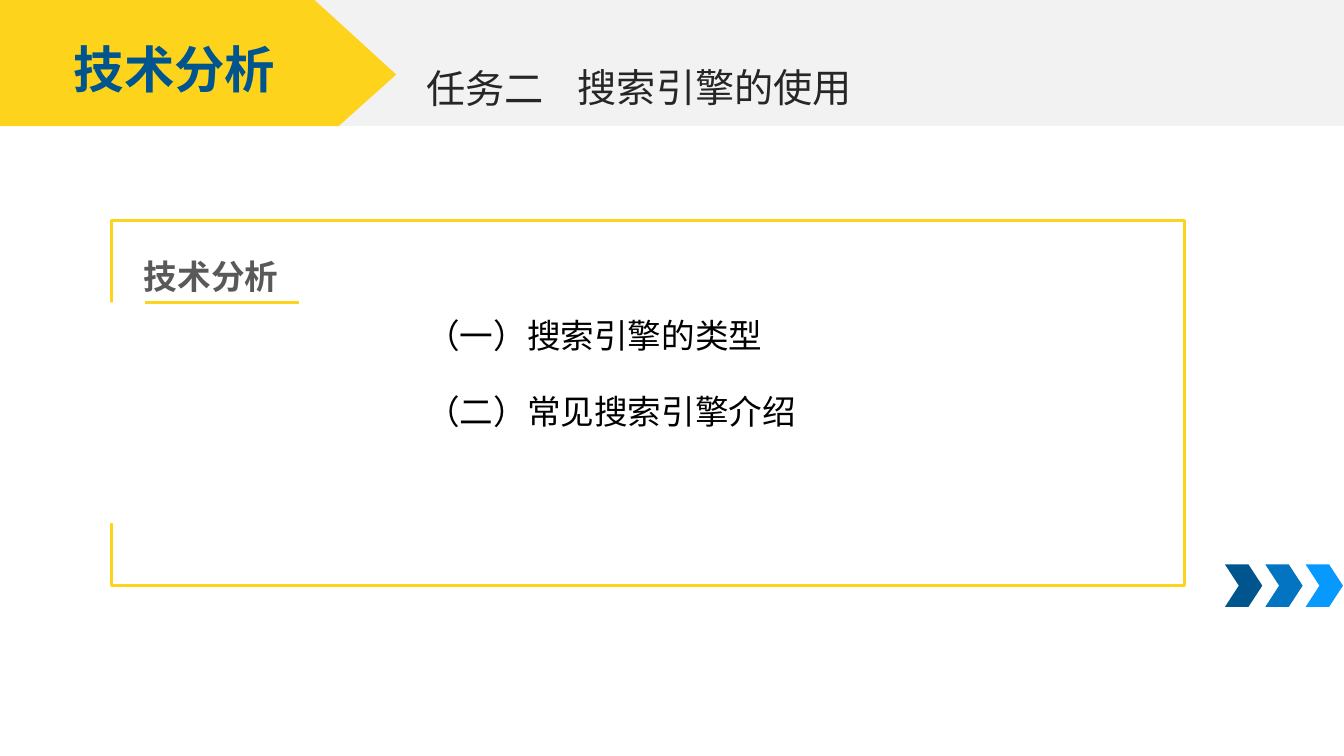
from lxml import etree
from pptx import Presentation
from pptx.dml.color import RGBColor
from pptx.enum.shapes import MSO_CONNECTOR, MSO_SHAPE
from pptx.enum.text import MSO_ANCHOR, MSO_AUTO_SIZE, PP_ALIGN
from pptx.oxml.ns import qn
from pptx.util import Inches, Pt

RECTANGLE, CHEVRON = MSO_SHAPE.RECTANGLE, MSO_SHAPE.CHEVRON
STRAIGHT = MSO_CONNECTOR.STRAIGHT
LEFT, CENTER, JUSTIFY = PP_ALIGN.LEFT, PP_ALIGN.CENTER, PP_ALIGN.JUSTIFY
TOP = MSO_ANCHOR.TOP
GROW = MSO_AUTO_SIZE.SHAPE_TO_FIT_TEXT

COLORS = {
    "white": "FFFFFF",
    "yellow": "FED31C",
    "band": "F2F2F2",
    "navy": "01558E",
    "blue": "0274C2",
    "sky": "0799FD",
    "heading": "595959",
    "title": "262626",
    "black": "000000",
}
CJK_FONT = "Noto Sans CJK SC"


def rgb(color):
    return RGBColor.from_string(COLORS[color])


def style_shape(shape, fill, line=None):
    shape.shadow.inherit = False
    shape.fill.solid()
    shape.fill.fore_color.rgb = rgb(fill)
    if line:
        shape.line.color.rgb = rgb(line)
        shape.line.width = Pt(2)
    else:
        shape.line.fill.background()


def add_block(slide, kind, box, fill, line=None):
    block = slide.shapes.add_shape(kind, *map(Inches, box))
    style_shape(block, fill, line)
    return block


def add_rule(slide, start, end, color):
    rule = slide.shapes.add_connector(STRAIGHT, *map(Inches, start + end))
    rule.line.color.rgb = rgb(color)
    rule.line.width = Pt(2)
    etree.SubElement(rule.element.spPr, qn("a:effectLst"))


def add_banner(slide, points, fill):
    corners = [tuple(map(Inches, point)) for point in points]
    builder = slide.shapes.build_freeform(*corners[0])
    builder.add_line_segments(corners[1:], close=True)
    style_shape(builder.convert_to_shape(), fill)


def write_text(shape, text, size, color, font="Arial", bold=False,
               align=LEFT, spacing=1.0, wrap=True):
    frame = shape.text_frame
    frame.text = text
    frame_format = {"word_wrap": wrap, "auto_size": GROW, "vertical_anchor": TOP}
    for name, value in frame_format.items():
        setattr(frame, name, value)
    paragraph = frame.paragraphs[0]
    paragraph.alignment = align
    paragraph.line_spacing = spacing
    run = paragraph.runs[0]
    for name, value in {"name": font, "size": Pt(size), "bold": bold}.items():
        setattr(run.font, name, value)
    run.font.color.rgb = rgb(color)
    east_asian = etree.SubElement(run.font._element, qn("a:ea"))
    east_asian.set("typeface", CJK_FONT)


def add_text(slide, box, text, size, color, **text_format):
    label = slide.shapes.add_textbox(*map(Inches, box))
    write_text(label, text, size, color, **text_format)


def set_title(slide, box, text, size, color):
    """Fill the title placeholder and bring it in front of the header band."""
    title = slide.shapes.title
    title.left, title.top, title.width, title.height = map(Inches, box)
    write_text(title, text, size, color)
    slide.shapes.element.append(title.element)


def add_header(slide):
    add_block(slide, RECTANGLE, (2.55, 0, 10.78, 1.25), "band")
    banner = [(0, 0), (3.12, 0), (3.93, 0.74), (3.36, 1.25), (0, 1.25)]
    add_banner(slide, banner, "yellow")
    add_text(slide, (0.62, 0.33, 2.22, 0.71), "技术分析", 36, "navy",
             font=CJK_FONT, bold=True, align=CENTER, wrap=False)
    set_title(slide, (5.63, 0.58, 4.66, 0.57), "搜索引擎的使用", 28, "title")
    add_text(slide, (4.13, 0.59, 1.49, 0.57), "任务二", 28, "title")


def add_content_frame(slide):
    """Draw the yellow frame, open on its left side, with its heading."""
    add_block(slide, RECTANGLE, (1.11, 2.19, 10.64, 3.62), "white", "yellow")
    add_block(slide, RECTANGLE, (0.93, 3, 0.4, 2.19), "white")
    add_rule(slide, (1.44, 3), (2.97, 3), "yellow")
    add_text(slide, (1.33, 2.41, 2.06, 0.54), "技术分析", 24, "heading",
             bold=True, align=JUSTIFY, spacing=1.2)


def add_topics(slide):
    topics = [("（一）搜索引擎的类型", 3.57), ("（二）常见搜索引擎介绍", 3.9)]
    for index, (topic, width) in enumerate(topics):
        add_text(slide, (4.13, 3.08 + 0.75 * index, width, 0.5), topic, 24,
                 "black", wrap=False)


def add_chevrons(slide):
    for index, color in enumerate(("navy", "blue", "sky")):
        chevron = add_block(slide, CHEVRON, (12.15 + 0.4 * index, 5.6, 0.37, 0.42), color)
        chevron.adjustments[0] = 0.37


def main():
    prs = Presentation()
    prs.slide_width, prs.slide_height = Inches(13.33), Inches(7.5)
    title_only = prs.slide_layouts[5]
    slide = prs.slides.add_slide(title_only)
    add_content_frame(slide)
    add_header(slide)
    add_topics(slide)
    add_chevrons(slide)
    prs.save("out.pptx")


if __name__ == "__main__":
    main()
